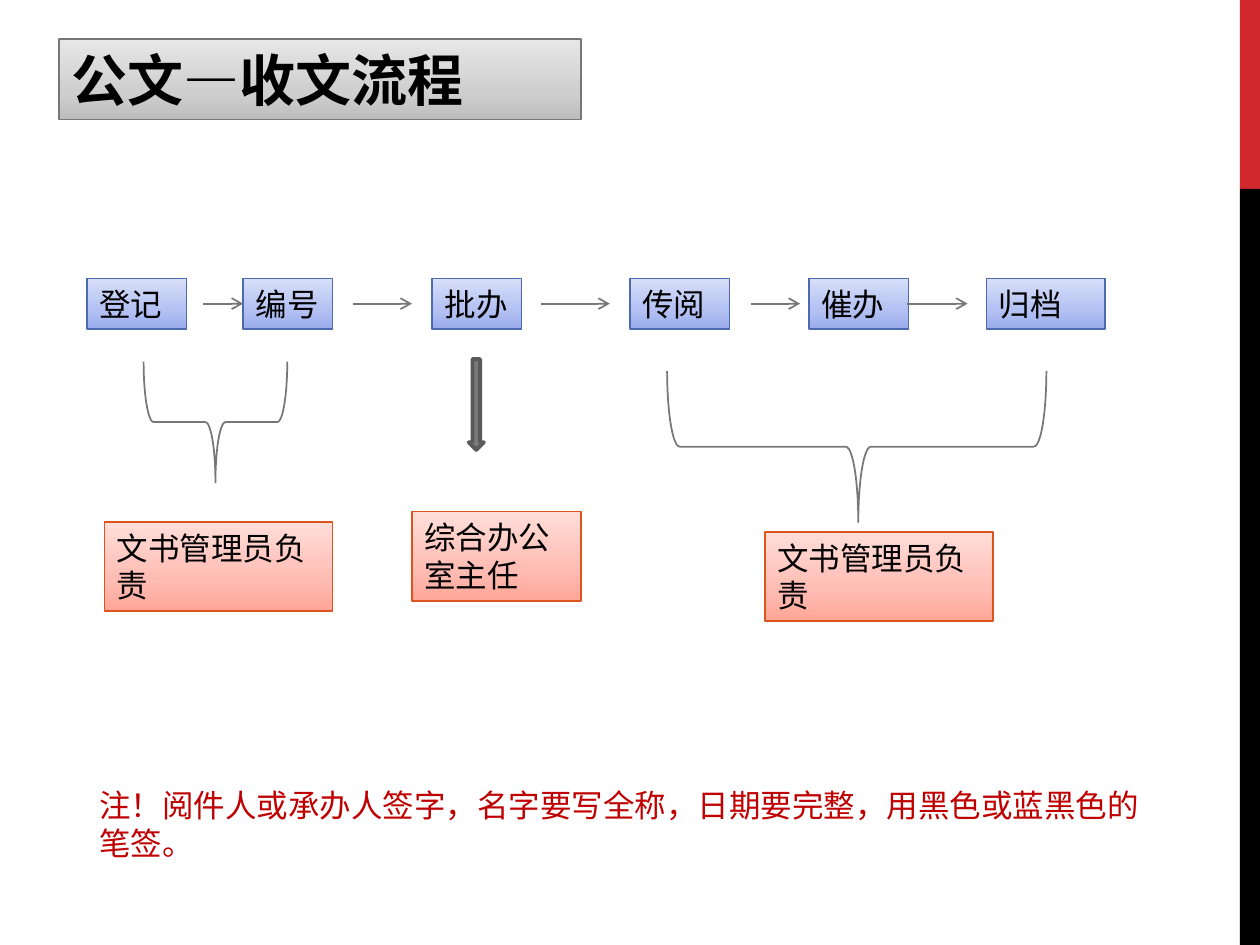
import copy

import pptx
import pptx.dml.color
import pptx.enum.dml
import pptx.enum.shapes
import pptx.enum.text
import pptx.oxml
import pptx.oxml.ns
import pptx.util

Inches = pptx.util.Inches
Pt = pptx.util.Pt
SHAPE = pptx.enum.shapes.MSO_SHAPE

COLORS = {
    "red": "D1282E", "black": "000000", "note": "C00000", "gray": "777777",
    "arrow": "7A7A7A", "arrow_edge": "5A5A5A", "blue_edge": "4E6AAE", "orange_edge": "DC551F",
}
# Gradient colours run from the bottom of a box to its top.
GRADIENTS = {
    "gray": ("BEBEBE", "CFCFCF", "E7E7E7"),
    "blue": ("9AACED", "B2C0F3", "D8DFF9"),
    "orange": ("FFA698", "FFBCB3", "FFDED9"),
}
STOP_POSITIONS = (0, 0.35, 1)
CJK_FONT = "Noto Sans CJK SC"

STEP_TOP, STEP_HEIGHT = 2.21, 0.4
STEPS = [("登记", 0.69, 0.79), ("编号", 1.93, 0.71), ("批办", 3.43, 0.71),
         ("传阅", 5, 0.79), ("催办", 6.42, 0.79), ("归档", 7.83, 0.94)]
STEP_ARROWS = [(1.61, 1.93), (2.8, 3.27), (4.29, 4.84), (5.96, 6.35), (7.2, 7.68)]
OWNERS = [("文书管理员负责", 0.83, 4.14, 1.81), ("综合办公室主任", 3.27, 4.06, 1.34),
          ("文书管理员负责", 6.07, 4.22, 1.81)]


def rgb(value):
    return pptx.dml.color.RGBColor.from_string(value)


def set_line(shape, color, width=1):
    shape.line.color.rgb = rgb(color)
    shape.line.width = Pt(width)


def add_shape(page, kind, left, top, width, height, fill=None):
    """Add a preset shape without shadow or outline, filled only if a colour is given."""
    shape = page.shapes.add_shape(kind, Inches(left), Inches(top), Inches(width), Inches(height))
    shape.shadow.inherit = False
    shape.line.fill.background()
    if fill:
        shape.fill.solid()
        shape.fill.fore_color.rgb = rgb(fill)
    else:
        shape.fill.background()
    return shape


def set_gradient(shape, colors):
    shape.fill.gradient()
    shape.fill.gradient_angle = 90
    stop_list = shape._element.spPr.find(".//" + pptx.oxml.ns.qn("a:gsLst"))
    stop_list.append(copy.deepcopy(stop_list[0]))
    for stop, position, color in zip(shape.fill.gradient_stops, STOP_POSITIONS, colors):
        stop.position = position
        stop.color.rgb = rgb(color)


def set_text(shape, text, size=18, font="Arial", color="black", bold=False):
    frame = shape.text_frame
    frame.text = text
    frame.word_wrap = True
    frame.auto_size = pptx.enum.text.MSO_AUTO_SIZE.SHAPE_TO_FIT_TEXT
    para = frame.paragraphs[0]
    para.alignment = pptx.enum.text.PP_ALIGN.LEFT
    span = para.runs[0]
    span.font.size = Pt(size)
    span.font.name = font
    span.font.bold = bold
    span.font.color.rgb = rgb(COLORS[color])
    east_asian = pptx.oxml.parse_xml(
        f'<a:ea {pptx.oxml.ns.nsdecls("a")} typeface="{CJK_FONT}"/>')
    span.font._element.find(pptx.oxml.ns.qn("a:latin")).addnext(east_asian)


def add_box(page, text, left, top, width, height, gradient, edge, **style):
    box = add_shape(page, SHAPE.RECTANGLE, left, top, width, height)
    set_gradient(box, GRADIENTS[gradient])
    set_line(box, COLORS[edge])
    set_text(box, text, **style)


def add_step_arrow(page, start, end):
    middle = Inches(STEP_TOP + STEP_HEIGHT / 2)
    arrow = page.shapes.add_connector(
        pptx.enum.shapes.MSO_CONNECTOR.STRAIGHT, Inches(start), middle, Inches(end), middle)
    set_line(arrow, COLORS["gray"])
    namespace = pptx.oxml.ns.nsdecls("a")
    arrow.line._get_or_add_ln().append(
        pptx.oxml.parse_xml(f'<a:tailEnd {namespace} type="arrow"/>'))
    arrow._element.spPr.append(pptx.oxml.parse_xml(f"<a:effectLst {namespace}/>"))


def add_brace(page, left, top, width, height, middle=0.5):
    """Add a brace that opens upward; the frame is given before rotation."""
    brace = add_shape(page, SHAPE.LEFT_BRACE, left, top, width, height)
    brace.rotation = 270
    brace.adjustments[0] = 0.083
    brace.adjustments[1] = middle
    set_line(brace, COLORS["gray"])


def add_note(page, text):
    note = page.shapes.add_textbox(Inches(0.69), Inches(6.19), Inches(8.48), Inches(0.71))
    set_text(note, text, color="note")


def main():
    deck = pptx.Presentation()
    deck.slide_width, deck.slide_height = Inches(10), Inches(7.5)
    page = deck.slides.add_slide(deck.slide_layouts[6])

    add_shape(page, SHAPE.RECTANGLE, 9.84, 0, 0.16, 1.5, COLORS["red"])
    add_shape(page, SHAPE.RECTANGLE, 9.84, 1.5, 0.16, 6, COLORS["black"])
    add_box(page, "公文—收文流程", 0.47, 0.31, 4.14, 0.64, "gray", "gray",
            size=32, font=CJK_FONT, bold=True)

    for text, left, width in STEPS:
        add_box(page, text, left, STEP_TOP, width, STEP_HEIGHT, "blue", "blue_edge")
    for start, end in STEP_ARROWS:
        add_step_arrow(page, start, end)

    add_brace(page, 1.23, 2.78, 0.96, 1.14)
    add_brace(page, 6.2, 2.04, 1.2, 3.01, middle=0.504)
    down_arrow = add_shape(page, SHAPE.DOWN_ARROW, 3.72, 2.85, 0.12, 0.72, COLORS["arrow"])
    set_line(down_arrow, COLORS["arrow_edge"], 2.25)

    for text, left, top, width in OWNERS:
        add_box(page, text, left, top, width, 0.71, "orange", "orange_edge")
    add_note(page, "注！阅件人或承办人签字，名字要写全称，日期要完整，用黑色或蓝黑色的笔签。")

    deck.save("out.pptx")


if __name__ == "__main__":
    main()
